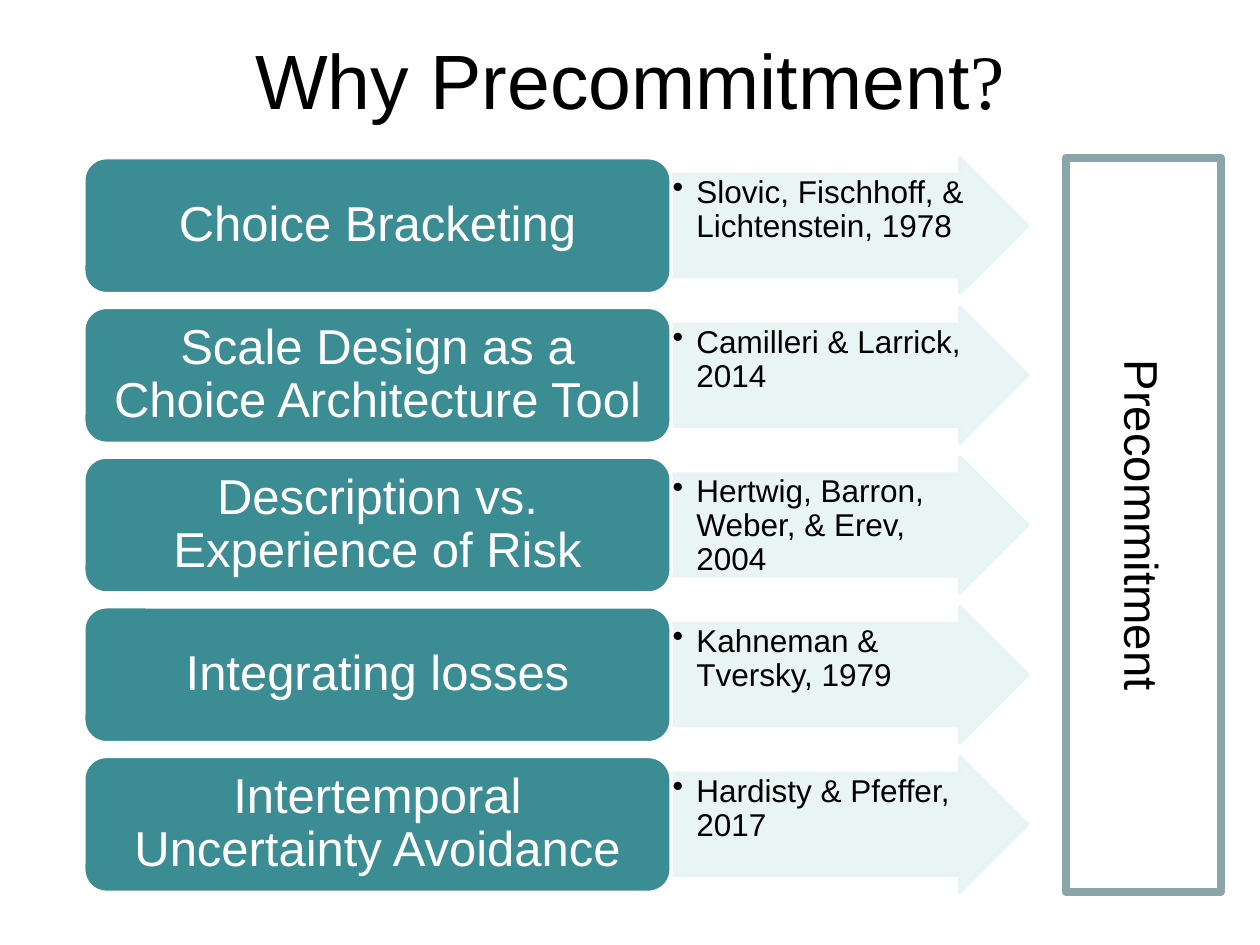
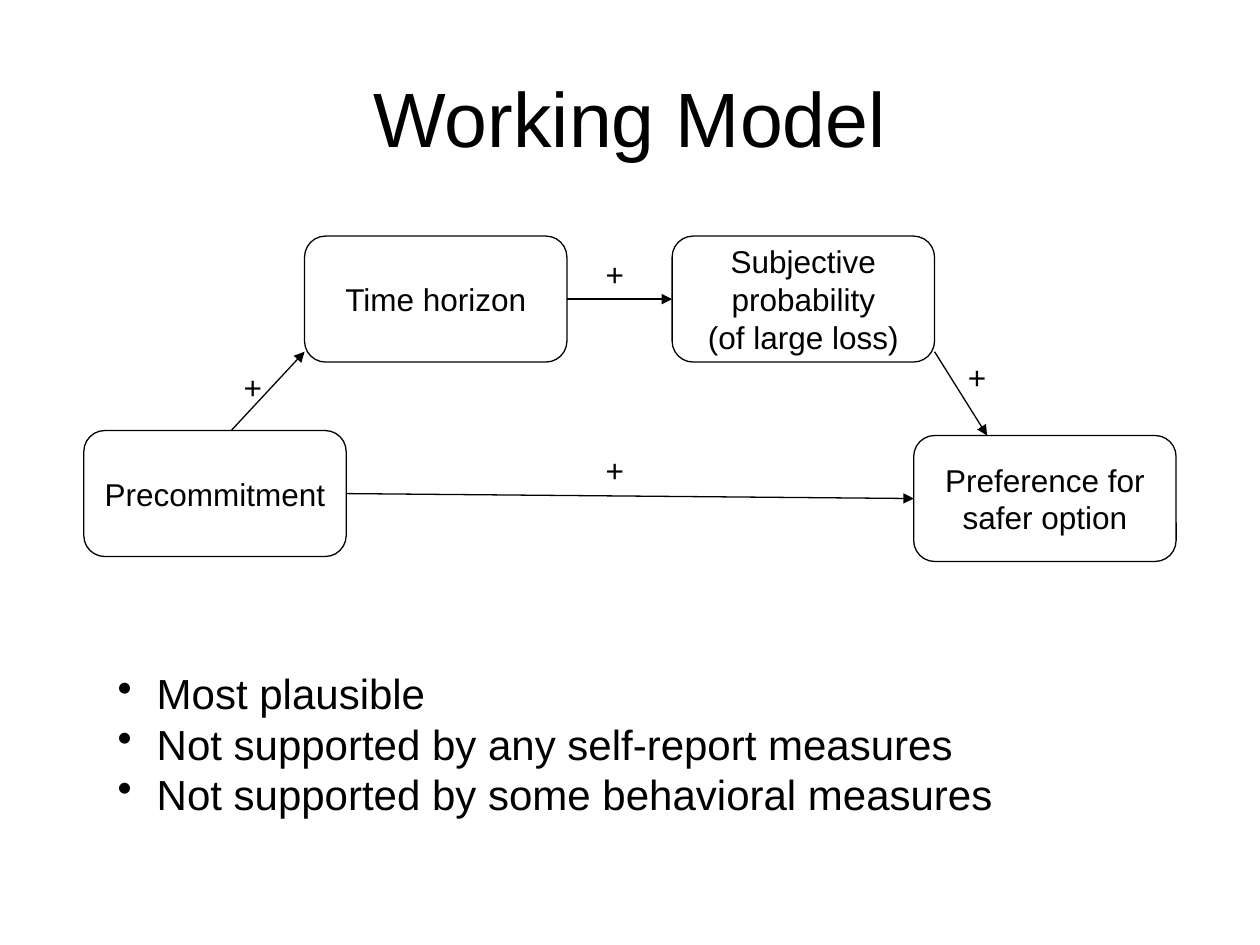
from dataclasses import dataclass

from lxml.etree import SubElement
from pptx import Presentation
from pptx.dml.color import RGBColor
from pptx.enum.shapes import MSO_CONNECTOR, MSO_SHAPE
from pptx.enum.text import MSO_ANCHOR, PP_ALIGN
from pptx.oxml.ns import qn
from pptx.util import Cm, Pt


@dataclass(frozen=True)
class Theme:
    font: str = "Arial"
    mark_font: str = "Times New Roman"
    black: str = "000000"
    white: str = "FFFFFF"
    teal: str = "3C8C93"
    pale: str = "E7F3F4"
    frame: str = "8AA6A8"
    title: int = 44
    reason: int = 28
    outcome: int = 27
    bullet: int = 24
    body: int = 18


T = Theme()

# Content: slide 1
REASONS = [
    ("Choice Bracketing", "Slovic, Fischhoff, & Lichtenstein, 1978"),
    ("Scale Design as a Choice Architecture Tool", "Camilleri & Larrick, 2014"),
    ("Description vs. Experience of Risk", "Hertwig, Barron, Weber, & Erev, 2004"),
    ("Integrating losses", "Kahneman & Tversky, 1979"),
    ("Intertemporal Uncertainty Avoidance", "Hardisty & Pfeffer, 2017"),
]
OUTCOME = "Precommitment"

# Content: slide 2 (places in cm)
FACTORS = {
    "precommitment": (1.69, 8.68, ["Precommitment"]),
    "preference": (18.42, 8.78, ["Preference for safer option"]),
    "probability": (13.55, 4.76, ["Subjective probability", "(of large loss)"]),
    "horizon": (6.14, 4.76, ["Time horizon"]),
}
SIDE_LINKS = [("precommitment", "preference"), ("horizon", "probability")]
SLANTED_LINKS = [(4.66, 8.68, 6.14, 7.09), (18.84, 7.09, 19.9, 8.78)]
PLUS_SIGNS = [(4.66, 7.29), (11.96, 8.97), (11.96, 5.01), (19.26, 7.09)]
FINDINGS = [
    "Most plausible",
    "Not supported by any self-report measures",
    "Not supported by some behavioral measures",
]


# Shared helpers
def rgb(value):
    return RGBColor.from_string(value)


def write(s, lines, size, color=T.black, align=PP_ALIGN.CENTER,
          anchor=MSO_ANCHOR.MIDDLE, margins=None, bullet=None, spacing=None):
    """Fill a shape with paragraphs; margins are (side, top/bottom) in cm."""
    tf = s.text_frame
    tf.word_wrap = True
    tf.vertical_anchor = anchor
    if margins:
        tf.margin_left = tf.margin_right = Cm(margins[0])
        tf.margin_top = tf.margin_bottom = Cm(margins[1])
    for i, line in enumerate(lines):
        p = tf.add_paragraph() if i else tf.paragraphs[0]
        p.add_run().text = line
        p.alignment = align
        p.line_spacing = spacing
        p.font.name, p.font.size = T.font, Pt(size)
        p.font.color.rgb = rgb(color)
        if bullet:
            pPr = p._p.get_or_add_pPr()
            pPr.set("marL", str(Cm(bullet)))
            pPr.set("indent", str(-Cm(bullet)))
            mark = pPr.makeelement(qn("a:buChar"), {"char": "•"})
            pPr.insert_element_before(mark, "a:tabLst", "a:defRPr", "a:extLst")
    return tf


def add_text(slide, x, y, w, h, lines, size, **style):
    return write(slide.shapes.add_textbox(Cm(x), Cm(y), Cm(w), Cm(h)), lines, size, **style)


def add_box(slide, kind, x, y, w, h, fill, line, weight):
    s = slide.shapes.add_shape(kind, Cm(x), Cm(y), Cm(w), Cm(h))
    s.shadow.inherit = False
    if fill:
        s.fill.solid()
        s.fill.fore_color.rgb = rgb(fill)
    else:
        s.fill.background()
    s.line.color.rgb = rgb(line)
    s.line.width = Pt(weight)
    return s


def add_title(slide, text, y):
    return add_text(slide, 1.27, y, 22.86, 3.18, [text], T.title)


def add_arrow(slide, x1=0, y1=0, x2=0, y2=0):
    c = slide.shapes.add_connector(MSO_CONNECTOR.STRAIGHT, Cm(x1), Cm(y1), Cm(x2), Cm(y2))
    c.line.color.rgb = rgb(T.black)
    c.line.width = Pt(0.75)
    SubElement(c.line._get_or_add_ln(), qn("a:tailEnd"), type="triangle")
    SubElement(c._element.spPr, qn("a:effectLst"))
    return c


def build_reasons(slide):
    tf = add_title(slide, "Why Precommitment", 0)
    r = tf.paragraphs[0].add_run()
    r.text = "?"
    r.font.name = T.mark_font

    # Rows: a reason card and an arrow with its reference
    left, top, height, row_h = 1.69, 3.18, 14.81, 2.74
    card_w, arrow_w = 11.84, 7.19
    pitch = (height - row_h) / (len(REASONS) - 1)
    for i, (reason, reference) in enumerate(REASONS):
        y = top + i * pitch
        s = add_box(slide, MSO_SHAPE.RIGHT_ARROW, left + card_w, y, arrow_w, row_h,
                    T.pale, T.pale, 2)
        s.adjustments[0], s.adjustments[1] = 0.75, 0.5
        for color in s._element.spPr.iter(qn("a:srgbClr")):
            SubElement(color, qn("a:alpha"), val="90000")
        write(s, [reference], T.body, align=PP_ALIGN.LEFT, anchor=MSO_ANCHOR.TOP,
              margins=(0.03, 0.03), bullet=0.48, spacing=0.9)
        s = add_box(slide, MSO_SHAPE.ROUNDED_RECTANGLE, left, y, card_w, row_h,
                    T.teal, T.white, 2)
        write(s, [reason], T.reason, T.white, margins=(0.3, 0.15), spacing=0.9)

    # Outcome frame with vertical text
    s = add_box(slide, MSO_SHAPE.RECTANGLE, 21.49, top, 3.12, height, None, T.frame, 4.5)
    tf = write(s, [OUTCOME], T.outcome)
    tf._txBody.bodyPr.set("vert", "vert")


def build_model(slide):
    add_title(slide, "Working Model", 0.76)

    # Factors
    boxes = {}
    for name, (x, y, lines) in FACTORS.items():
        s = add_box(slide, MSO_SHAPE.ROUNDED_RECTANGLE, x, y, 5.29, 2.54,
                    T.white, T.black, 0.75)
        write(s, lines, T.body)
        boxes[name] = s

    # Links and their signs
    for start, end in SIDE_LINKS:
        c = add_arrow(slide)
        c.begin_connect(boxes[start], 3)
        c.end_connect(boxes[end], 1)
    for ends in SLANTED_LINKS:
        add_arrow(slide, *ends)
    for x, y in PLUS_SIGNS:
        tf = add_text(slide, x, y, 0.89, 1.02, ["+"], T.body,
                      align=PP_ALIGN.LEFT, anchor=MSO_ANCHOR.TOP)
        tf.word_wrap = False

    # Findings
    add_text(slide, 2.12, 13.34, 19.69, 3.33, FINDINGS, T.bullet,
             align=PP_ALIGN.LEFT, anchor=MSO_ANCHOR.TOP, bullet=0.79)


def main():
    prs = Presentation()
    prs.slide_width, prs.slide_height = Cm(25.4), Cm(19.05)
    for build in (build_reasons, build_model):
        build(prs.slides.add_slide(prs.slide_layouts[6]))
    prs.save("out.pptx")


if __name__ == "__main__":
    main()
